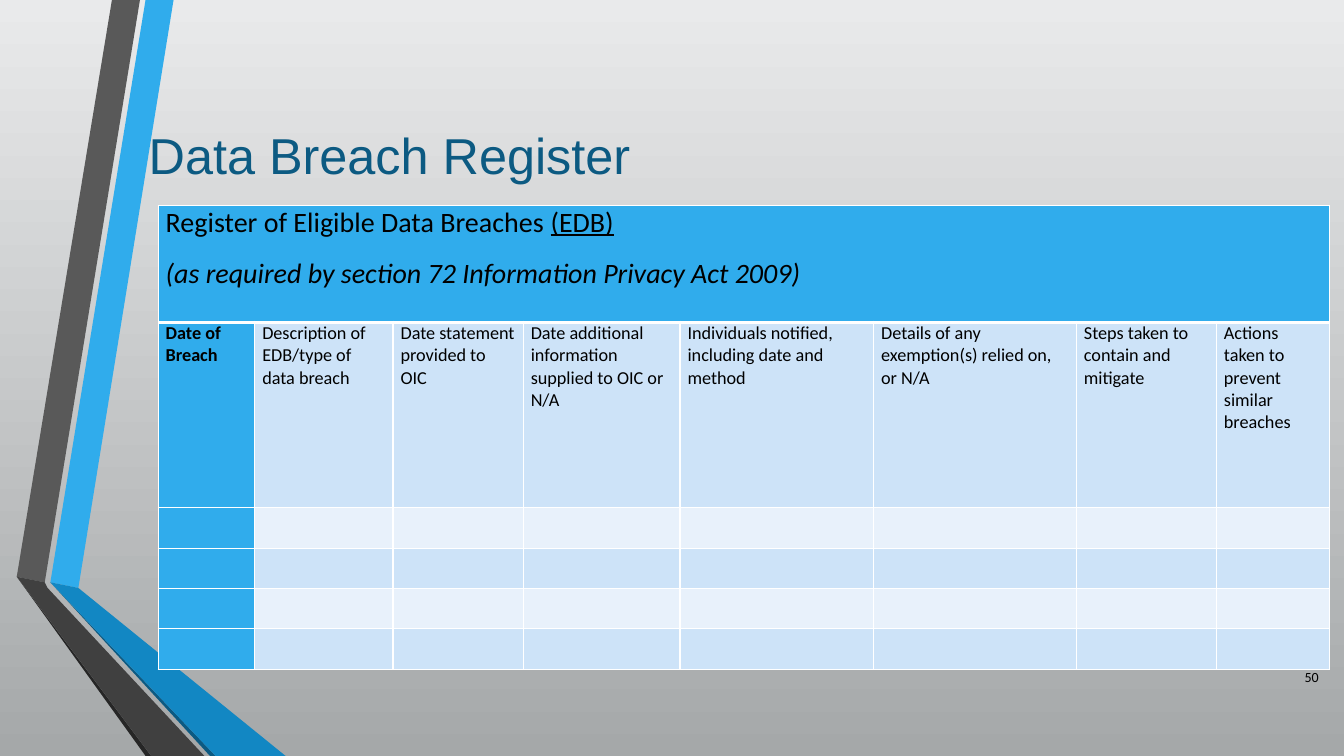
import pptx
import pptx.util
import pptx.dml.color
import pptx.enum.text
import pptx.oxml
import pptx.oxml.ns

Pt = pptx.util.Pt
ALIGN = pptx.enum.text.PP_ALIGN
MIDDLE = pptx.enum.text.MSO_ANCHOR.MIDDLE
HUES = {
    "sky": "30ACEC", "blue": "1287C3", "navy": "0C5A82",
    "gray": "595959", "dark": "404040", "coal": "262626",
    "band": "CDE3F8", "pale": "E8F1FB", "black": "000000",
    "white": "FFFFFF", "top": "E9EAEB", "base": "A5A8A9",
}


def hue(name):
    return pptx.dml.color.RGBColor.from_string(HUES[name])


def style(para, face, size, color):
    para.font.name = face
    para.font.size = Pt(size)
    para.font.color.rgb = hue(color)


deck = pptx.Presentation()
deck.slide_width = Pt(960)
deck.slide_height = Pt(540)
slide = deck.slides.add_slide(deck.slide_layouts[5])
shapes = slide.shapes

back = slide.background.fill
back.gradient()
back.gradient_angle = 270
for stop, name in zip(back.gradient_stops, ("top", "base")):
    stop.color.rgb = hue(name)

arms = [
    ("sky", [(36, 416), (55.5, 420), (124.5, 0), (104.5, 0)]),
    ("gray", [(100, 0), (80, 0), (11.8, 412.5), (31.5, 415.5)]),
    ("coal", [(11.8, 412.5), (104.5, 540), (108.5, 540)]),
    ("navy", [(36, 416.5), (150, 540), (154, 540)]),
    ("blue", [(36, 416.5), (154, 540), (204, 540), (55.5, 420)]),
    ("dark", [(145.5, 540), (34.5, 420), (31.5, 415.5), (11.8, 412.5), (108.5, 540)]),
]
for color, points in arms:
    pen = shapes.build_freeform(*points[0], scale=Pt(1))
    pen.add_line_segments(points[1:], close=True)
    arm = pen.convert_to_shape()
    arm.shadow.inherit = False
    arm.fill.solid()
    arm.fill.fore_color.rgb = hue(color)
    arm.line.fill.background()

widths = [69, 98.8, 93, 112, 138.3, 144.9, 100, 81]
heights = [83.5, 132.5] + [28.8] * 4
heads = [
    "Date of Breach",
    "Description of EDB/type of data breach",
    "Date statement provided to OIC",
    "Date additional information supplied to OIC or N/A",
    "Individuals notified, including date and method",
    "Details of any exemption(s) relied on, or N/A",
    "Steps taken to contain and mitigate",
    "Actions taken to prevent similar breaches",
]
frame = shapes.add_table(len(heights), len(widths), Pt(113), Pt(146.8),
                         Pt(sum(widths)), Pt(sum(heights)))
table = frame.table
table.first_row = False
table.horz_banding = False
for col, width in zip(table.columns, widths):
    col.width = Pt(width)
for row, height in zip(table.rows, heights):
    row.height = Pt(height)

for r in range(len(heights)):
    for c in range(len(widths)):
        cell = table.cell(r, c)
        cell.margin_left = cell.margin_right = Pt(5.4)
        cell.margin_top = cell.margin_bottom = 0
        cell.fill.solid()
        shade = "band" if r % 2 else "pale"
        cell.fill.fore_color.rgb = hue("sky" if r == 0 or c == 0 else shade)
        for k, side in enumerate(("lnL", "lnR", "lnT", "lnB")):
            thick = 3 if (r, side) in ((0, "lnB"), (1, "lnT")) else 1
            edge = pptx.oxml.parse_xml(
                f'<a:{side} {pptx.oxml.ns.nsdecls("a")} w="{Pt(thick)}"><a:solidFill>'
                f'<a:srgbClr val="{HUES["white"]}"/></a:solidFill></a:{side}>')
            cell._tc.get_or_add_tcPr().insert(k, edge)

for c, head in enumerate(heads):
    para = table.cell(1, c).text_frame.paragraphs[0]
    para.text = head
    para.space_after = Pt(12)
    style(para, "Calibri", 13, "black")
    para.font.bold = c == 0

banner = table.cell(0, 0)
banner.merge(table.cell(0, len(widths) - 1))
first = banner.text_frame.paragraphs[0]
first.add_run().text = "Register of Eligible Data Breaches "
mark = first.add_run()
mark.text = "(EDB)"
mark.font.underline = True
second = banner.text_frame.add_paragraph()
second.text = "(as required by section 72 Information Privacy Act 2009)"
for para in (first, second):
    para.alignment = ALIGN.JUSTIFY
    para.space_after = Pt(12)
    style(para, "Calibri", 20, "black")
second.font.italic = True

number = shapes.add_textbox(Pt(905.8), Pt(469.4), Pt(43.2), Pt(28.8))
number.text_frame.word_wrap = True
number.text_frame.vertical_anchor = MIDDLE
para = number.text_frame.paragraphs[0]
para.text = "50"
para.alignment = ALIGN.RIGHT
style(para, "Calibri", 10, "black")

title = shapes.title
title.left, title.top, title.width, title.height = Pt(89.3), Pt(63.4), Pt(378), Pt(93.6)
title.text_frame.word_wrap = True
title.text_frame.auto_size = pptx.enum.text.MSO_AUTO_SIZE.NONE
title.text_frame.vertical_anchor = MIDDLE
para = title.text_frame.paragraphs[0]
para.text = "Data Breach Register"
para.alignment = ALIGN.CENTER
style(para, "Arial", 36, "navy")
title.element.getparent().append(title.element)

deck.save("out.pptx")
